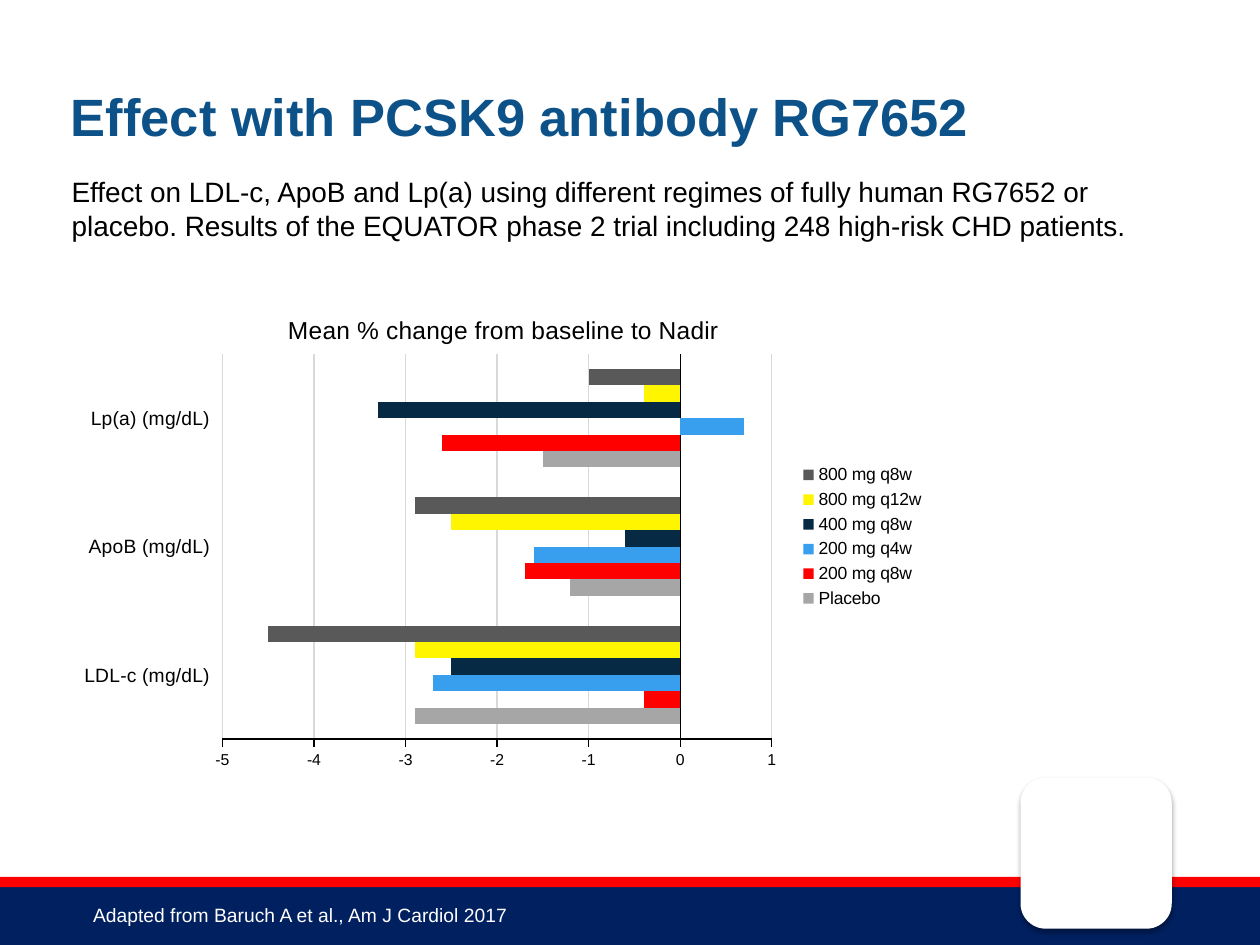
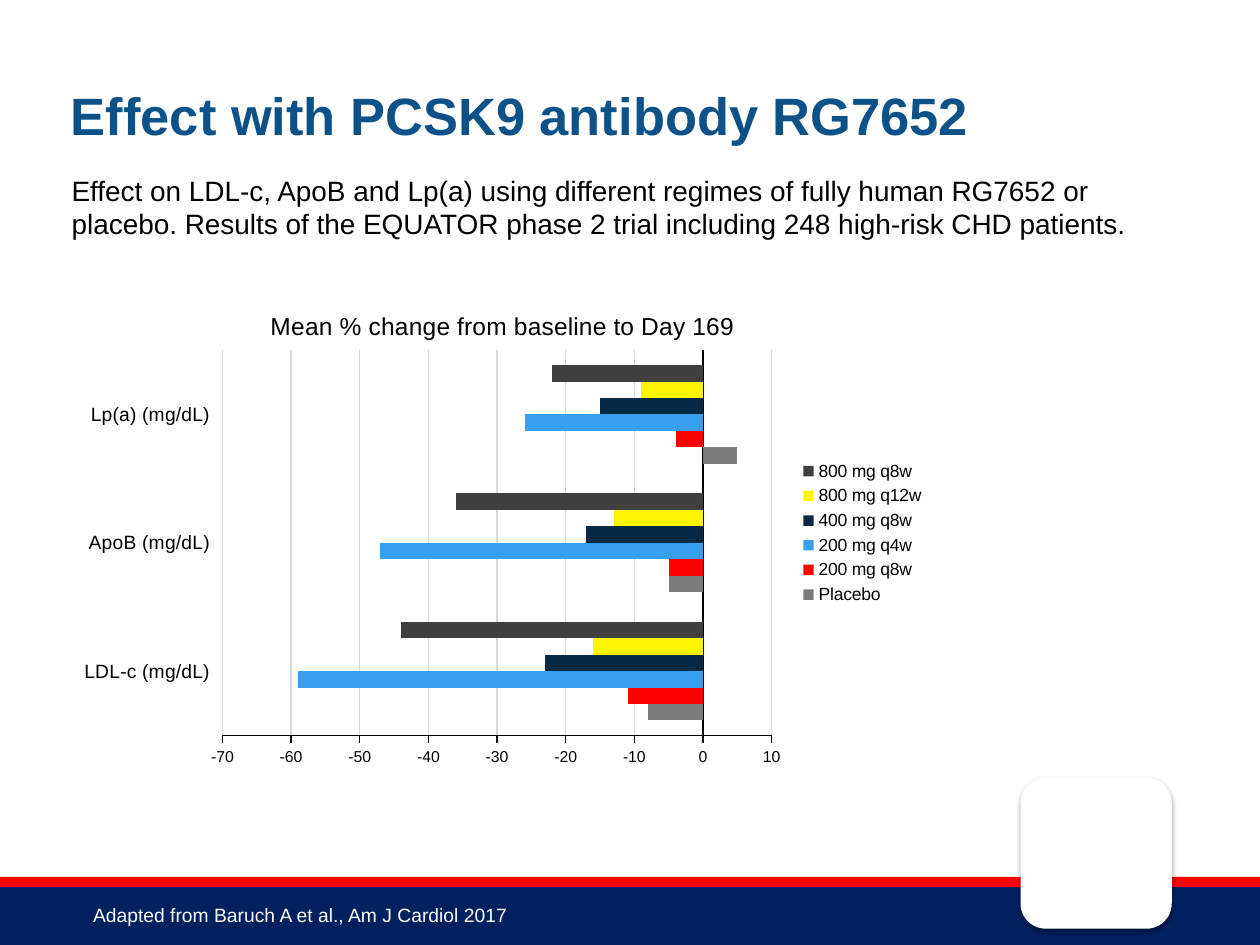
from typing import NamedTuple

from lxml import etree
from pptx import Presentation
from pptx.chart.data import CategoryChartData
from pptx.dml.color import RGBColor
from pptx.enum.chart import XL_CHART_TYPE, XL_LEGEND_POSITION, XL_TICK_LABEL_POSITION, XL_TICK_MARK
from pptx.enum.shapes import MSO_SHAPE
from pptx.enum.text import MSO_ANCHOR, MSO_AUTO_SIZE, PP_ALIGN
from pptx.oxml import parse_xml
from pptx.oxml.ns import nsdecls, qn
from pptx.util import Inches, Pt

BAR = XL_CHART_TYPE.BAR_CLUSTERED
LEGEND_RIGHT = XL_LEGEND_POSITION.RIGHT
LABELS_LOW = XL_TICK_LABEL_POSITION.LOW
TICK_NONE, TICK_OUT = XL_TICK_MARK.NONE, XL_TICK_MARK.OUTSIDE
RECT, ROUND_RECT = MSO_SHAPE.RECTANGLE, MSO_SHAPE.ROUNDED_RECTANGLE
TOP, BOTTOM = MSO_ANCHOR.TOP, MSO_ANCHOR.BOTTOM
NO_FIT = MSO_AUTO_SIZE.NONE
LEFT = PP_ALIGN.LEFT

COLUMNS, ROWS = 100, 75
CELL = Inches(0.1)
FONT = "Arial"
BLACK, WHITE, NAVY, RED = "000000", "FFFFFF", "002060", "FF0000"
TITLE_BLUE, GRID_GRAY = "0C5289", "D9D9D9"
TITLE_ONLY = 5

HEADING = "Effect with PCSK9 antibody RG7652"
SUMMARY = (
    "Effect on LDL-c, ApoB and Lp(a) using different regimes of fully human RG7652 or placebo. "
    "Results of the EQUATOR phase 2 trial including 248 high-risk CHD patients."
)
CITATION = "Adapted from Baruch A et al., Am J Cardiol 2017"
LIPIDS = ["LDL-c (mg/dL)", "ApoB (mg/dL)", "Lp(a) (mg/dL)"]
REGIMES = ["Placebo", "200 mg q8w", "200 mg q4w", "400 mg q8w", "800 mg q12w", "800 mg q8w"]


class Box(NamedTuple):
    left: float
    top: float
    width: float
    height: float

    def emu(self):
        return [round(length * CELL) for length in self]

    def share(self, left, top, width, height):
        return Box(
            self.left + left * self.width,
            self.top + top * self.height,
            width * self.width,
            height * self.height,
        )


class Outcome(NamedTuple):
    title: str
    title_left: float
    changes: list
    grays: tuple
    scale: tuple
    heading_top: float
    chart_top: float


OUTCOMES = [
    Outcome(
        "Mean % change from baseline to Nadir", 0.25,
        [(-2.9, -1.2, -1.5), (-0.4, -1.7, -2.6), (-2.7, -1.6, 0.7),
         (-2.5, -0.6, -3.3), (-2.9, -2.5, -0.4), (-4.5, -2.9, -1)],
        ("A6A6A6", "595959"), (-5, 1, 1), 2.6, 23,
    ),
    Outcome(
        "Mean % change from baseline to Day 169", 0.23,
        [(-8, -5, 5), (-11, -5, -4), (-59, -47, -26),
         (-23, -17, -15), (-16, -13, -9), (-44, -36, -22)],
        ("7C7C7C", "404040"), (-70, 10, 10), 2.5, 22.7,
    ),
]


def color(hex_code):
    return RGBColor.from_string(hex_code)


def style_font(font, size, hex_code=BLACK, bold=False):
    font.name, font.size, font.bold = FONT, Pt(size), bold
    font.color.rgb = color(hex_code)


def write(frame, text, size=16, hex_code=BLACK, bold=False, leading=None, anchor=TOP, inset=None):
    frame.word_wrap = True
    frame.auto_size = NO_FIT
    frame.vertical_anchor = anchor
    if inset is not None:
        frame.margin_left = frame.margin_right = inset
        frame.margin_top = frame.margin_bottom = inset
    paragraph = frame.paragraphs[0]
    paragraph.alignment = LEFT
    if leading:
        paragraph.line_spacing = Pt(leading)
    run = paragraph.add_run()
    run.text = text
    style_font(run.font, size, hex_code, bold)


def add_panel(slide, layout, preset, box, hex_code):
    panel = slide.shapes.add_shape(preset, *box.emu())
    panel.shadow.inherit = False
    panel.fill.solid()
    panel.fill.fore_color.rgb = color(hex_code)
    panel.line.fill.background()
    layout.shapes.element.append(panel.element)
    return panel


def add_soft_shadow(panel):
    effects = panel.element.spPr.find(qn("a:effectLst"))
    effects.append(parse_xml(
        f'<a:outerShdw {nsdecls("a")} blurRad="{Pt(3.1)}" dist="{Pt(1.8)}" dir="5400000" '
        f'rotWithShape="0"><a:srgbClr val="{BLACK}"><a:alpha val="35000"/></a:srgbClr></a:outerShdw>'
    ))


def dress_layout(slide, layout, box):
    add_panel(slide, layout, RECT, box.share(0, 0.11, 1, 0.89), NAVY)
    add_panel(slide, layout, RECT, box.share(0, 0, 1, 0.15), RED)
    badge = add_panel(slide, layout, ROUND_RECT, box.share(0.81, -1.46, 0.12, 2.22), WHITE)
    add_soft_shadow(badge)


def place_heading(slide, box):
    title = slide.shapes.title
    title.left, title.top, title.width, title.height = box.share(0.01, 0, 0.99, 0.53).emu()
    write(title.text_frame, HEADING, size=30, hex_code=TITLE_BLUE, bold=True,
          leading=30, anchor=BOTTOM, inset=0)
    summary = slide.shapes.add_textbox(*box.share(0, 0.63, 0.98, 0.37).emu())
    write(summary.text_frame, SUMMARY)


def place_citation(slide, box):
    citation = slide.shapes.add_textbox(*box.emu())
    write(citation.text_frame, CITATION, size=11, hex_code=WHITE)


def set_layout(parent, **values):
    layout = parent.find(qn("c:layout"))
    if layout is None:
        layout = etree.Element(qn("c:layout"))
        position = 1 if parent.find(qn("c:tx")) is not None else 0
        parent.insert(position, layout)
    manual = etree.SubElement(layout, qn("c:manualLayout"))
    for tag, value in values.items():
        etree.SubElement(manual, qn(f"c:{tag}")).set("val", str(value))


def style_axis(axis, size, tick):
    axis.major_tick_mark = tick
    axis.minor_tick_mark = TICK_NONE
    axis.format.line.color.rgb = color(BLACK)
    axis.format.line.width = Pt(0.75)
    style_font(axis.tick_labels.font, size)


def place_chart(slide, box, outcome):
    changes = CategoryChartData()
    changes.categories = LIPIDS
    for regime, values in zip(REGIMES, outcome.changes):
        changes.add_series(regime, values)
    chart = slide.shapes.add_chart(BAR, *box.emu(), changes).chart
    style_font(chart.font, 10)

    run = chart.chart_title.text_frame.paragraphs[0].add_run()
    run.text = outcome.title
    style_font(run.font, 14)
    set_layout(chart.element.find(".//" + qn("c:title")),
               xMode="edge", yMode="edge", x=outcome.title_left, y=0.04)

    plot = chart.plots[0]
    plot.gap_width = 182
    plot.vary_by_categories = False
    placebo_gray, top_dose_gray = outcome.grays
    regime_colors = [placebo_gray, RED, "389EEE", "062944", "FFF500", top_dose_gray]
    for series, hex_code in zip(plot.series, regime_colors):
        series.invert_if_negative = False
        series.format.fill.solid()
        series.format.fill.fore_color.rgb = color(hex_code)

    style_axis(chart.category_axis, 11, TICK_NONE)
    chart.category_axis.tick_label_position = LABELS_LOW
    percent = chart.value_axis
    style_axis(percent, 9, TICK_OUT)
    percent.minimum_scale, percent.maximum_scale, percent.major_unit = outcome.scale
    percent.major_gridlines.format.line.color.rgb = color(GRID_GRAY)
    percent.major_gridlines.format.line.width = Pt(0.75)

    chart.has_legend = True
    chart.legend.position = LEGEND_RIGHT
    chart.legend.include_in_layout = False
    style_font(chart.legend.font, 10)
    set_layout(chart.element.find(".//" + qn("c:plotArea")), layoutTarget="inner",
               xMode="edge", yMode="edge", x=0.18, y=0.13, w=0.63, h=0.78)


def build_slide(deck, layout, outcome):
    slide = deck.slides.add_slide(layout)
    place_heading(slide, Box(4.7, outcome.heading_top, 91.3, 17.1))
    place_chart(slide, Box(5.2, outcome.chart_top, 69.2, 39.2), outcome)
    place_citation(slide, Box(6.4, 71.2, 43.2, 2.9))
    return slide


def main():
    deck = Presentation()
    deck.slide_width, deck.slide_height = COLUMNS * CELL, ROWS * CELL
    layout = deck.slide_layouts[TITLE_ONLY]
    slides = [build_slide(deck, layout, outcome) for outcome in OUTCOMES]
    dress_layout(slides[0], layout, Box(0, 69.6, COLUMNS, 5.4))
    deck.save("out.pptx")


if __name__ == "__main__":
    main()
